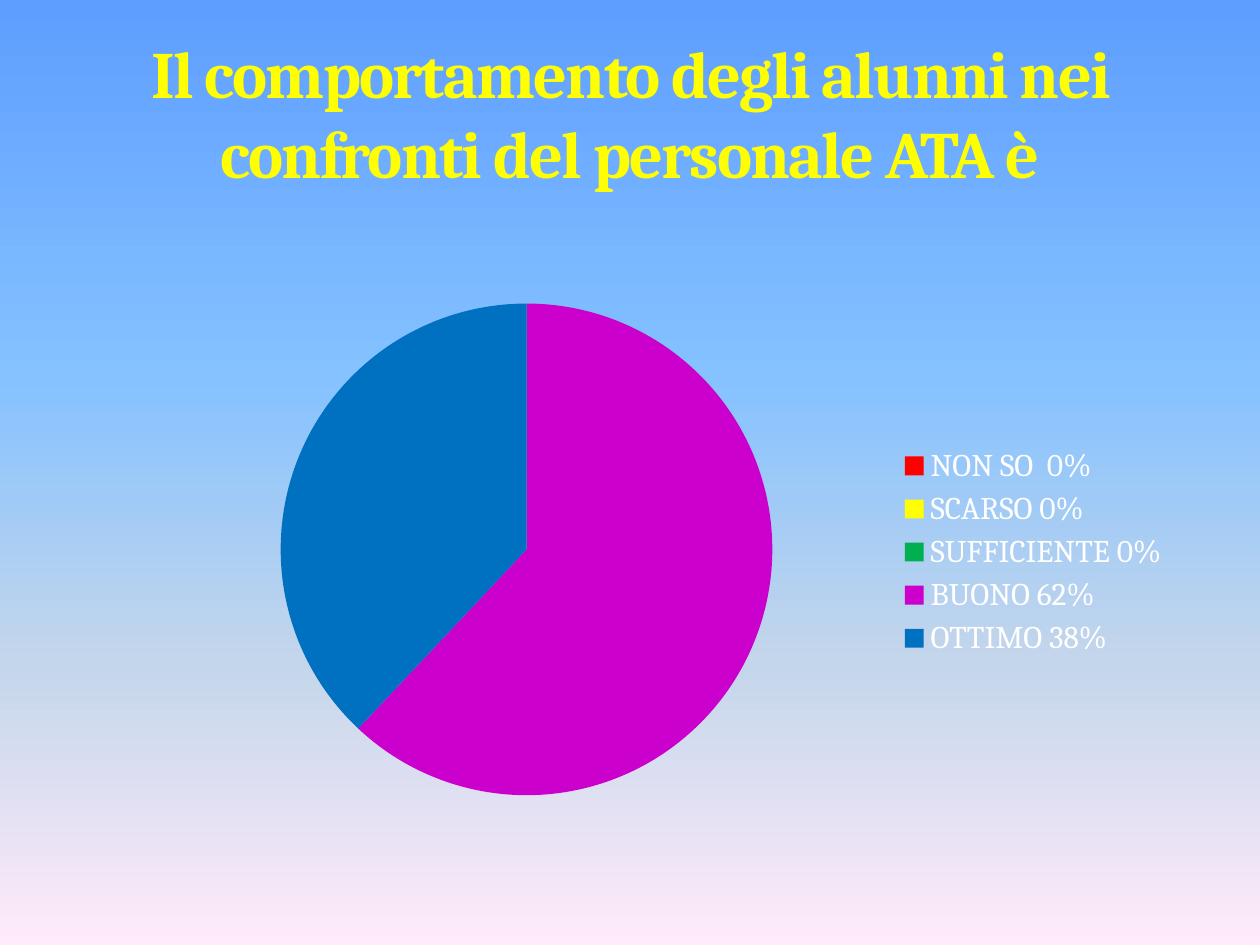
from lxml import etree
from pptx import Presentation
from pptx import util as u
from pptx.chart import data
from pptx.dml.color import RGBColor
from pptx.enum import chart as ch, text
from pptx.oxml import parse_xml
from pptx.oxml.ns import nsdecls, qn


def rgb(value):
    return RGBColor.from_string(value)


def add_text(tf, words, size, color, font="Cambria", bold=False, spacing=0):
    p = tf.paragraphs[0]
    p.alignment = text.PP_ALIGN.CENTER
    r = p.add_run()
    r.text = words
    r.font.size, r.font.name, r.font.bold = u.Pt(size), font, bold
    r.font.color.rgb = rgb(color)
    r._r.get_or_add_rPr().set("spc", str(spacing * 100))
    return r


prs = Presentation()
prs.slide_width, prs.slide_height = u.Cm(25.4), u.Cm(19.05)
s = prs.slides.add_slide(prs.slide_layouts[6])

# Background gradient, top to bottom
fill = s.background.fill
fill.gradient()
fill.gradient_angle = 270
stops = next(s._element.iter(qn("a:gsLst")))
for stop in list(stops):
    stops.remove(stop)
for pos, color in [(0, "5E9EFF"), (40, "85C2FF"), (70, "C4D6EB"), (100, "FFEBFA")]:
    stop = etree.SubElement(stops, qn("a:gs"), pos=str(pos * 1000))
    etree.SubElement(stop, qn("a:srgbClr"), val=color)

# Title, raised from the bottom of its box by the inset
sp = s.shapes.add_textbox(u.Cm(1.27), u.Cm(0.43), u.Cm(22.86), u.Cm(5.13))
tf = sp.text_frame
tf.word_wrap = True
tf.vertical_anchor = text.MSO_ANCHOR.BOTTOM
tf.margin_bottom = u.Cm(1.7)
r = add_text(tf, "Il comportamento degli alunni nei confronti del personale ATA è",
             size=37.8, color="FFFF00", bold=True, spacing=-1)
r._r.get_or_add_rPr().insert(0, parse_xml(
    f'<a:ln {nsdecls("a")} w="3175"><a:solidFill><a:srgbClr val="9C3888">'
    '<a:alpha val="25000"/></a:srgbClr></a:solidFill></a:ln>'))

# Pie chart of the answers
answers = [
    ("NON SO  0%", 0, "FF0000"),
    ("SCARSO 0%", 0, "FFFF00"),
    ("SUFFICIENTE 0%", 0, "00B050"),
    ("BUONO 62%", 62, "CC00CC"),
    ("OTTIMO 38%", 38, "0070C0"),
]
cd = data.CategoryChartData()
cd.categories = [name for name, _, _ in answers]
cd.add_series("Series 1", [value for _, value, _ in answers])
chart = s.shapes.add_chart(ch.XL_CHART_TYPE.PIE, u.Cm(3.18), u.Cm(5.77),
                           u.Cm(20.65), u.Cm(10.72), cd).chart
chart.has_title = False
chart.font.size, chart.font.name = u.Pt(18), "Cambria"
chart.font.color.rgb = rgb("FFFFFF")
chart.has_legend = True
chart.legend.position = ch.XL_LEGEND_POSITION.RIGHT
chart.legend.include_in_layout = True
plot = chart.plots[0]
plot.vary_by_categories = True
for i, (_, _, color) in enumerate(answers):
    point = plot.series[0].points[i].format
    point.fill.solid()
    point.fill.fore_color.rgb = rgb(color)
    point.line.fill.background()

# Place the pie left of the legend
area = chart._chartSpace.chart.plotArea
for old in area.findall(qn("c:layout")):
    area.remove(old)
layout = etree.Element(qn("c:layout"))
manual = etree.SubElement(layout, qn("c:manualLayout"))
for tag, val in [("layoutTarget", "inner"), ("xMode", "edge"), ("yMode", "edge"),
                 ("x", "0.12"), ("y", "0.03"), ("w", "0.48"), ("h", "0.93")]:
    etree.SubElement(manual, qn(f"c:{tag}"), val=val)
area.insert(0, layout)

prs.save("out.pptx")
